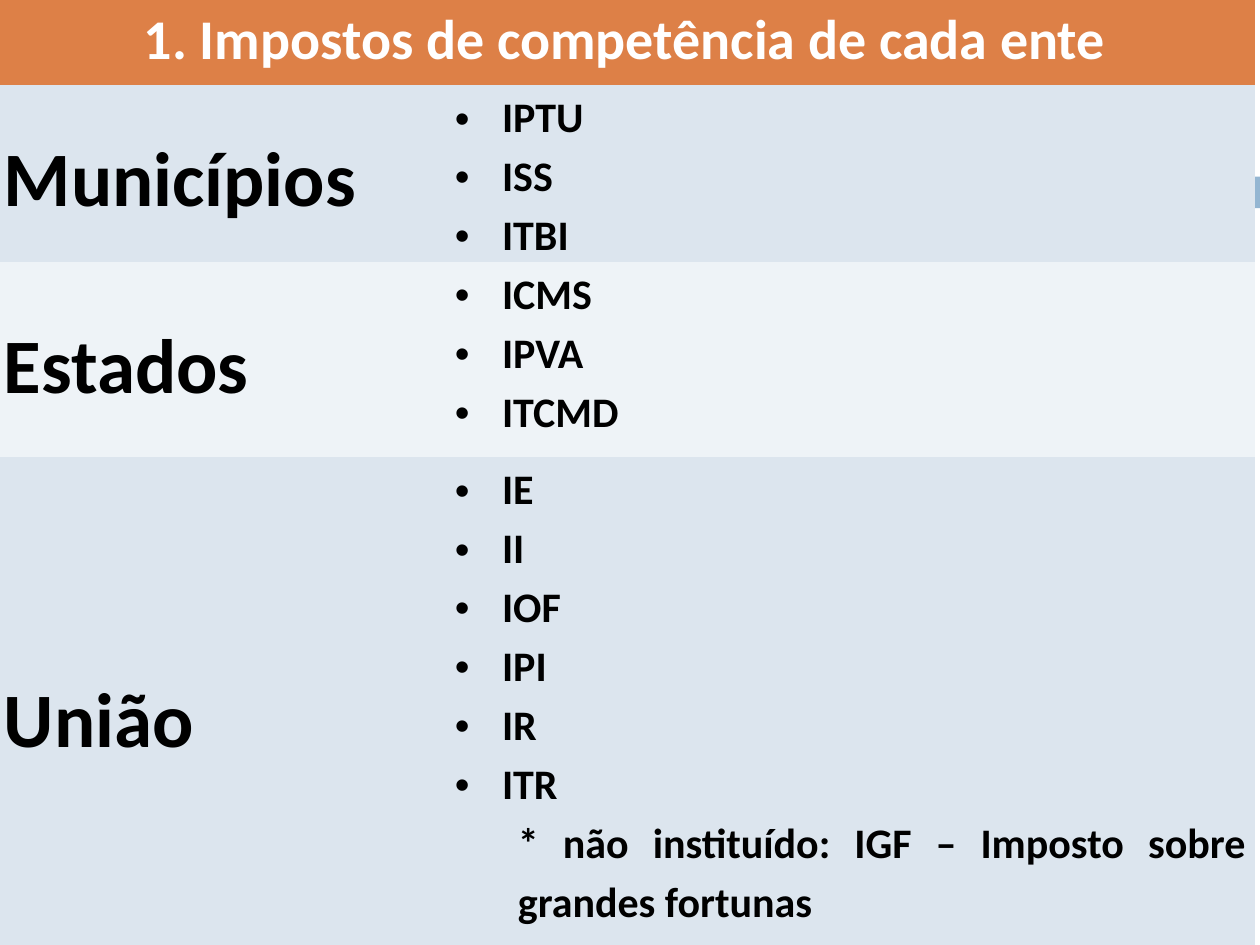
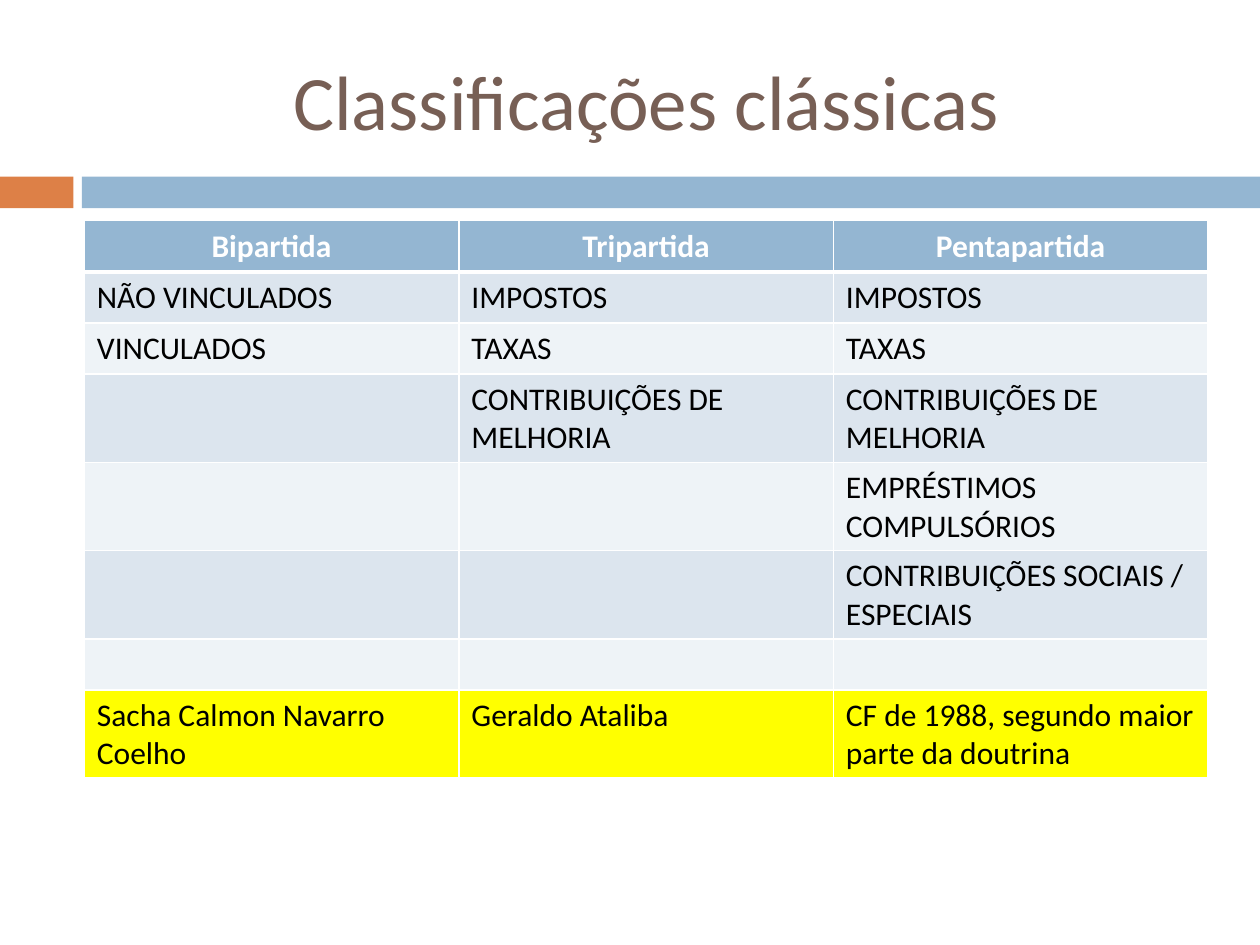
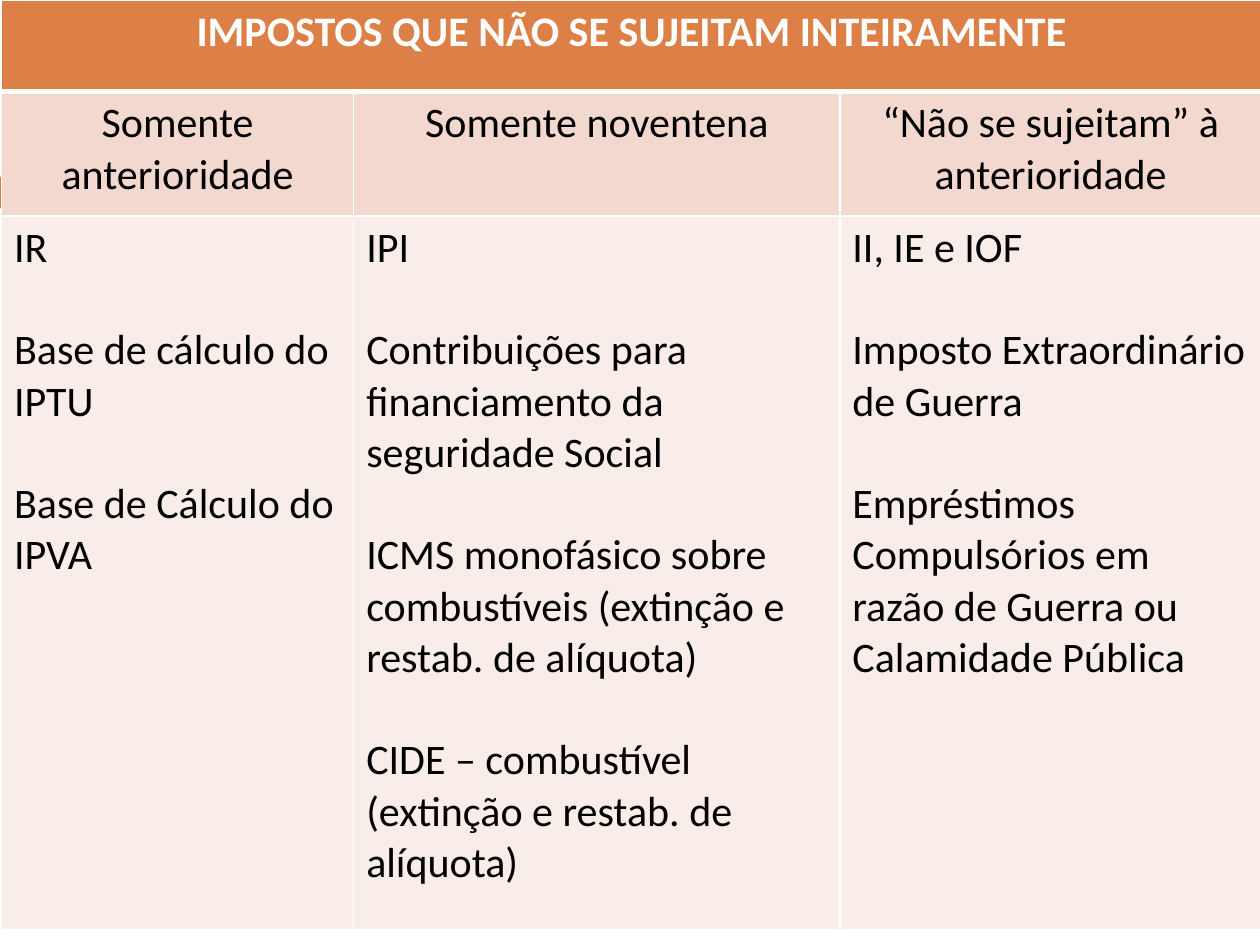
from lxml.etree import SubElement
from pptx import Presentation
from pptx.dml.color import RGBColor
from pptx.enum.shapes import MSO_SHAPE
from pptx.enum.text import MSO_ANCHOR, PP_ALIGN
from pptx.oxml.ns import qn
from pptx.util import Cm, Pt

FONT = "Calibri"
ORANGE, BLUE, BROWN = "DD8047", "94B6D2", "775F55"
WHITE, BLACK, YELLOW = "FFFFFF", "000000", "FFFF00"
BLUE_BANDS = ["DCE5EE", "EEF3F7"]
PINK_BANDS = ["F2D8CF", "F9EDE9"]


def rgb(hex_color):
    return RGBColor.from_string(hex_color)


class Deck:
    def __init__(self):
        self.presentation = Presentation()
        self.presentation.slide_width = Cm(25.4)
        self.presentation.slide_height = Cm(19.05)
        self.slide = None

    def new_slide(self):
        self.slide = self.presentation.slides.add_slide(self.presentation.slide_layouts[6])
        self.band(0, 1.48, ORANGE)
        self.band(1.65, 23.75, BLUE)

    def band(self, left, width, color):
        band = self.slide.shapes.add_shape(
            MSO_SHAPE.RECTANGLE, Cm(left), Cm(3.56), Cm(width), Cm(0.64))
        band.shadow.inherit = False
        band.fill.solid()
        band.fill.fore_color.rgb = rgb(color)
        band.line.fill.background()

    def title(self, text):
        frame = self.slide.shapes.add_textbox(Cm(1.7), Cm(0.64), Cm(22.66), Cm(2.74)).text_frame
        frame.word_wrap = True
        frame.vertical_anchor = MSO_ANCHOR.MIDDLE
        frame.text = text
        self.format_text(frame, 44, BROWN, align=PP_ALIGN.CENTER)

    def format_text(self, frame, size, color=BLACK, bold=False, align=PP_ALIGN.LEFT, spacing=None):
        for paragraph in frame.paragraphs:
            paragraph.alignment = align
            paragraph.line_spacing = spacing
            for run in paragraph.runs:
                run.font.name = FONT
                run.font.size = Pt(size)
                run.font.bold = bold
                run.font.color.rgb = rgb(color)

    def table(self, rows, left, top, widths, heights, fills, bordered=True):
        table = self.slide.shapes.add_table(
            len(rows), len(widths), Cm(left), Cm(top), Cm(sum(widths)), Cm(sum(heights))).table
        table.horz_banding = False
        for column, width in zip(table.columns, widths):
            column.width = Cm(width)
        for index, (texts, height, fill) in enumerate(zip(rows, heights, fills)):
            table.rows[index].height = Cm(height)
            for column, text in enumerate(texts):
                cell = table.cell(index, column)
                cell.text = text
                self.borders(cell, index, bordered)
                cell.fill.solid()
                cell.fill.fore_color.rgb = rgb(fill)
        return table

    def borders(self, cell, row, visible):
        thick_side = {0: "B", 1: "T"}.get(row)
        properties = cell._tc.get_or_add_tcPr()
        for side in "LRTB":
            width = Pt(3 if side == thick_side else 1) if visible else 0
            line = SubElement(properties, qn(f"a:ln{side}"), w=str(width))
            if visible:
                fill = SubElement(line, qn("a:solidFill"))
                SubElement(fill, qn("a:srgbClr"), val=WHITE)
            else:
                SubElement(line, qn("a:noFill"))

    def indent(self, paragraph, margin, bulleted):
        properties = paragraph._p.get_or_add_pPr()
        properties.set("marL", str(Cm(margin)))
        properties.set("indent", str(-Cm(margin) if bulleted else 0))
        if bulleted:
            SubElement(properties, qn("a:buFont"), typeface="Arial")
            SubElement(properties, qn("a:buChar"), char="•")


def taxes_by_entity(deck):
    deck.new_slide()
    footnote = "* não instituído: IGF – Imposto sobre grandes fortunas"
    rows = [
        ["1. Impostos de competência de cada ente", ""],
        ["Municípios", "IPTU\nISS\nITBI"],
        ["Estados", "ICMS\nIPVA\nITCMD"],
        ["União", "IE\nII\nIOF\nIPI\nIR\nITR\n" + footnote],
    ]
    table = deck.table(rows, -0.1, -0.08, [9.09, 16.31], [1.8, 2.6, 3.94, 10.36],
                       [ORANGE, *BLUE_BANDS, BLUE_BANDS[0]], bordered=False)
    table.cell(0, 0).merge(table.cell(0, 1))
    for cell in table.iter_cells():
        cell.margin_left = cell.margin_right = Cm(0.18)
        cell.margin_top = cell.margin_bottom = 0
    deck.format_text(table.cell(0, 0).text_frame, 32, WHITE, True, PP_ALIGN.CENTER, 1.15)
    for row in range(1, len(rows)):
        entity, taxes = table.cell(row, 0), table.cell(row, 1)
        entity.vertical_anchor = MSO_ANCHOR.MIDDLE
        deck.format_text(entity.text_frame, 44, BLACK, True, PP_ALIGN.JUSTIFY, 1.15)
        deck.format_text(taxes.text_frame, 24, BLACK, True, PP_ALIGN.JUSTIFY, 1.15)
        for paragraph in taxes.text_frame.paragraphs:
            bulleted = paragraph.text != footnote
            deck.indent(paragraph, 0.95 if bulleted else 1.27, bulleted)


def classic_classifications(deck):
    deck.new_slide()
    deck.title("Classificações clássicas")
    rows = [
        ["Bipartida", "Tripartida", "Pentapartida"],
        ["NÃO VINCULADOS", "IMPOSTOS", "IMPOSTOS"],
        ["VINCULADOS", "TAXAS", "TAXAS"],
        ["", "CONTRIBUIÇÕES DE MELHORIA", "CONTRIBUIÇÕES DE MELHORIA"],
        ["", "", "EMPRÉSTIMOS COMPULSÓRIOS"],
        ["", "", "CONTRIBUIÇÕES SOCIAIS / ESPECIAIS"],
        ["", "", ""],
        ["Sacha Calmon Navarro Coelho", "Geraldo Ataliba",
         "CF de 1988, segundo maior parte da doutrina"],
    ]
    table = deck.table(rows, 1.7, 4.45, [7.55] * 3, [1.03] * len(rows),
                       [BLUE, *BLUE_BANDS * 3, YELLOW])
    for cell in table.iter_cells():
        deck.format_text(cell.text_frame, 18)
    for header in table.rows[0].cells:
        deck.format_text(header.text_frame, 18, WHITE, True, PP_ALIGN.CENTER)


def anteriority_exceptions(deck):
    deck.new_slide()
    rows = [
        ["IMPOSTOS QUE NÃO SE SUJEITAM INTEIRAMENTE", "", ""],
        ["Somente anterioridade", "Somente noventena", "“Não se sujeitam” à anterioridade"],
        ["IR\nBase de cálculo do IPTU\nBase de Cálculo do IPVA",
         "IPI\nContribuições para financiamento da seguridade Social\n"
         "ICMS monofásico sobre combustíveis (extinção e restab. de alíquota)\n"
         "CIDE – combustível\n(extinção e restab. de alíquota)",
         "II, IE e IOF\nImposto Extraordinário de Guerra\n"
         "Empréstimos Compulsórios em razão de Guerra ou Calamidade Pública"],
    ]
    table = deck.table(rows, 0.03, 0, [7.1, 9.8, 8.5], [1.85, 2.51, 14.38],
                       [ORANGE, *PINK_BANDS])
    table.cell(0, 0).merge(table.cell(0, 2))
    deck.format_text(table.cell(0, 0).text_frame, 24, WHITE, True, PP_ALIGN.CENTER)
    for rule in table.rows[1].cells:
        deck.format_text(rule.text_frame, 24, align=PP_ALIGN.CENTER)
    for exceptions in table.rows[2].cells:
        deck.format_text(exceptions.text_frame, 24)
        for paragraph in exceptions.text_frame.paragraphs[1:]:
            if not paragraph.text.startswith("("):
                paragraph.space_before = Pt(29.3)


def main():
    deck = Deck()
    taxes_by_entity(deck)
    classic_classifications(deck)
    anteriority_exceptions(deck)
    deck.presentation.save("out.pptx")


if __name__ == "__main__":
    main()
